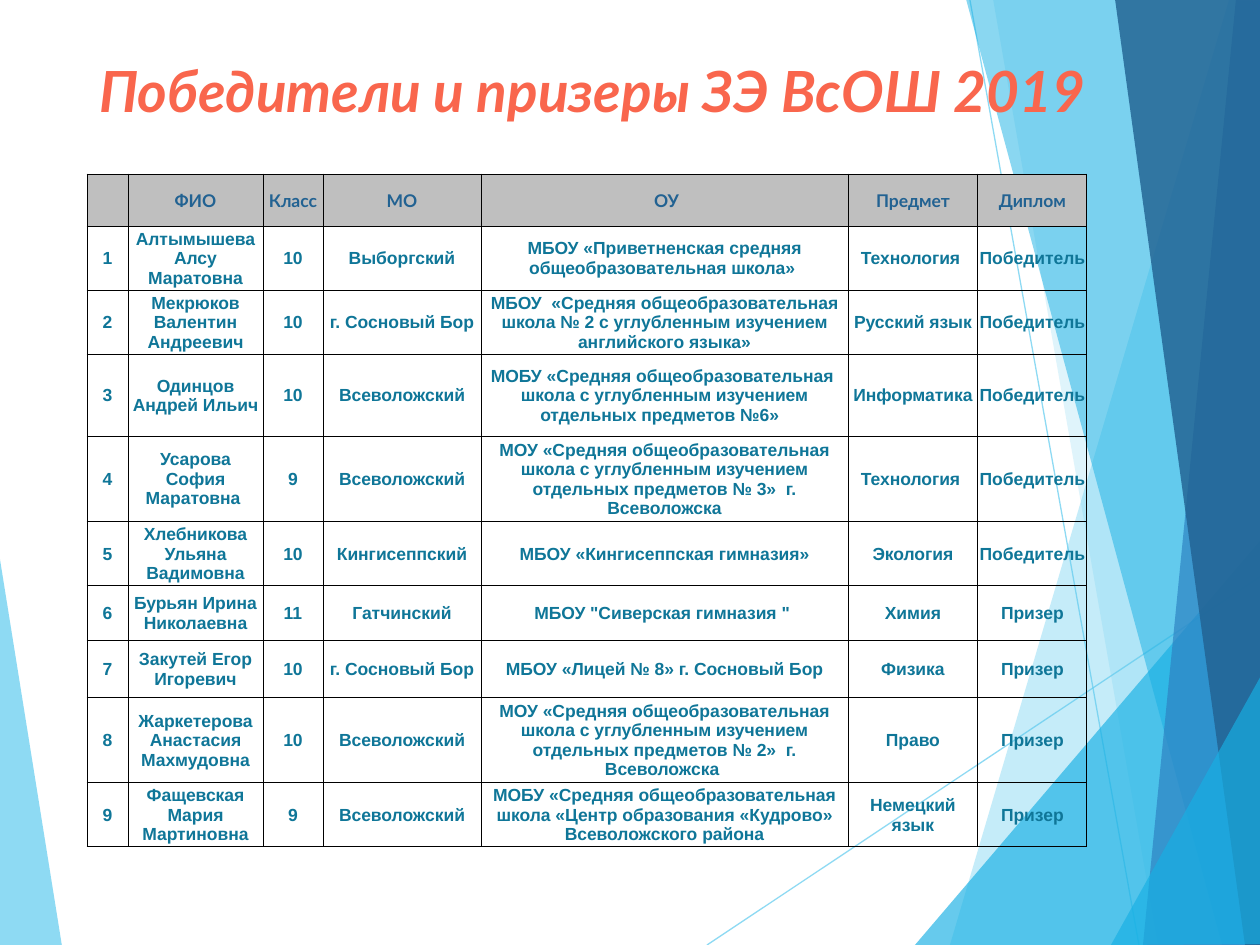
import pptx
import pptx.dml.color
import pptx.enum.shapes
import pptx.enum.text
import pptx.oxml
import pptx.oxml.ns
import pptx.util
from lxml import etree

RGB = pptx.dml.color.RGBColor
SKY = RGB(0x5F, 0xCB, 0xEF)
CYAN = RGB(0x17, 0xB0, 0xE4)
BLUE = RGB(0x2E, 0x83, 0xC3)
NAVY = RGB(0x22, 0x62, 0x92)
TEAL = RGB(0x0F, 0x76, 0x98)
CORAL = RGB(0xF9, 0x66, 0x4D)
GREY = RGB(0xBF, 0xBF, 0xBF)
ANCHOR = pptx.enum.text.MSO_ANCHOR
ALIGN = pptx.enum.text.PP_ALIGN
SCALE = 914400 / 126
qn = pptx.oxml.ns.qn

# Points, colour, opacity in percent, from back to front
RAYS = [
    ([(707, 945), (1261, 576)], SKY, 70),
    ([(970, 0), (1139, 945)], SKY, 70),
]
FACETS = [
    ([(1229, 0), (950, 945), (1262, 946), (1261, 1)], SKY, 36),
    ([(993, -1), (1158, 945), (1261, 945), (1261, -1)], SKY, 20),
    ([(915, 945), (1260, 541), (1261, 945)], CYAN, 66),
    ([(966, -1), (1222, 945), (1261, 944), (1261, -1)], CYAN, 50),
    ([(1236, -1), (1143, 945), (1261, 945), (1260, -1)], BLUE, 70),
    ([(1115, -1), (1245, 945), (1262, 945), (1260, -1)], NAVY, 82),
    ([(1111, 945), (1262, 674), (1262, 944)], CYAN, 66),
]
LEFT = ([(-1, 553), (62, 946), (-1, 945)], SKY, 70)

COLS = [41, 135, 60, 158, 367, 130, 109]
ROWS = [52, 62, 61, 82, 81, 62, 55, 57, 82, 61]
HEAD = ["", "ФИО", "Класс", "МО", " ОУ", "Предмет", "Диплом"]
PUPILS = [
    ("Алтымышева Алсу Маратовна", "10", "Выборгский",
     "МБОУ «Приветненская средняя общеобразовательная школа» ",
     "Технология ", "Победитель"),
    ("Мекрюков Валентин Андреевич", "10", "г. Сосновый Бор",
     "МБОУ  «Средняя общеобразовательная школа № 2 с углубленным "
     "изучением английского языка»", "Русский язык", "Победитель"),
    ("Одинцов Андрей Ильич", "10", "Всеволожский",
     "МОБУ «Средняя общеобразовательная  школа с углубленным изучением "
     "отдельных предметов №6»  ", "Информатика", "Победитель"),
    ("Усарова София Маратовна ", "9", "Всеволожский",
     "МОУ «Средняя общеобразовательная школа с углубленным изучением "
     "отдельных предметов № 3»  г. Всеволожска",
     "Технология ", "Победитель"),
    ("Хлебникова Ульяна Вадимовна", "10", "Кингисеппский",
     "МБОУ «Кингисеппская гимназия»", "Экология", "Победитель"),
    ("Бурьян Ирина Николаевна", "11", "Гатчинский",
     'МБОУ "Сиверская гимназия " ', "Химия", "Призер"),
    ("Закутей Егор Игоревич", "10", "г. Сосновый Бор",
     "МБОУ «Лицей № 8» г. Сосновый Бор", "Физика", "Призер"),
    ("Жаркетерова Анастасия Махмудовна", "10", "Всеволожский",
     "МОУ «Средняя общеобразовательная школа с углубленным изучением "
     "отдельных предметов № 2»  г. Всеволожска ", "Право", "Призер"),
    ("Фащевская Мария Мартиновна", "9", "Всеволожский",
     "МОБУ «Средняя общеобразовательная школа «Центр образования "
     "«Кудрово» Всеволожского района", "Немецкий язык", "Призер"),
]


def px(n):
    return pptx.util.Emu(round(n * SCALE))


def fade(shape, alpha):
    """Set the opacity of every plain colour in the shape."""
    for tint in shape._element.iter(qn("a:srgbClr")):
        etree.SubElement(tint, qn("a:alpha"), val=str(alpha * 1000))


def write(frame, text, size=10, font="Arial", color=TEAL, italic=False,
          align=ALIGN.CENTER):
    para = frame.paragraphs[0]
    para.alignment = align
    if not text:
        return
    run = para.add_run()
    run.text = text
    run.font.size = pptx.util.Pt(size)
    run.font.name = font
    run.font.bold = True
    run.font.italic = italic
    run.font.color.rgb = color


def frame_cell(cell):
    """Draw thin black borders on all four sides."""
    props = cell._tc.get_or_add_tcPr()
    for side in "LRTB":
        props.append(pptx.oxml.parse_xml(
            f'<a:ln{side} {pptx.oxml.ns.nsdecls("a")} w="6350"><a:solidFill>'
            f'<a:srgbClr val="000000"/></a:solidFill></a:ln{side}>'))


class Deck:
    def __init__(self):
        self.show = pptx.Presentation()
        self.show.slide_width = px(1260)
        self.show.slide_height = px(945)
        self.slide = self.show.slides.add_slide(self.show.slide_layouts[6])
        self.shapes = self.slide.shapes

    def facet(self, points, color, alpha):
        build = self.shapes.build_freeform(*points[0], scale=SCALE)
        build.add_line_segments(points[1:], close=True)
        shape = build.convert_to_shape()
        shape.shadow.inherit = False
        shape.fill.solid()
        shape.fill.fore_color.rgb = color
        shape.line.fill.background()
        fade(shape, alpha)

    def ray(self, points, color, alpha):
        ends = [px(n) for point in points for n in point]
        line = self.shapes.add_connector(
            pptx.enum.shapes.MSO_CONNECTOR.STRAIGHT, *ends)
        line.line.color.rgb = color
        line.line.width = pptx.util.Pt(0.75)
        fade(line, alpha)
        etree.SubElement(line._element.spPr, qn("a:effectLst"))

    def title(self, text, x, y, w, h):
        frame = self.shapes.add_textbox(px(x), px(y), px(w), px(h)).text_frame
        frame.word_wrap = True
        frame.vertical_anchor = ANCHOR.TOP
        write(frame, text, size=32.4, font="Lato", color=CORAL, italic=True,
              align=ALIGN.LEFT)

    def table(self, data, x, y):
        grid = self.shapes.add_table(
            len(ROWS), len(COLS), px(x), px(y),
            px(sum(COLS)), px(sum(ROWS))).table
        grid.first_row = grid.horz_banding = False
        for col, width in zip(grid.columns, COLS):
            col.width = px(width)
        for i, (row, height) in enumerate(zip(grid.rows, ROWS)):
            row.height = px(height)
            for cell, text in zip(row.cells, data[i]):
                self.cell(cell, text, head=i == 0)

    def cell(self, cell, text, head):
        cell.margin_left = cell.margin_right = cell.margin_top = px(1)
        cell.margin_bottom = 0
        cell.vertical_anchor = ANCHOR.MIDDLE
        frame_cell(cell)
        if head:
            cell.fill.solid()
            cell.fill.fore_color.rgb = GREY
            write(cell.text_frame, text, font="Lato", color=NAVY)
        else:
            cell.fill.background()
            write(cell.text_frame, text)


def main():
    deck = Deck()
    deck.facet(*LEFT)
    for ray in RAYS:
        deck.ray(*ray)
    for facet in FACETS:
        deck.facet(*facet)
    deck.title("Победители и призеры ЗЭ ВсОШ 2019", 87, 50, 1086, 74)
    body = [(str(n), *pupil) for n, pupil in enumerate(PUPILS, 1)]
    deck.table([HEAD] + body, 87, 174)
    deck.show.save("out.pptx")


if __name__ == "__main__":
    main()
